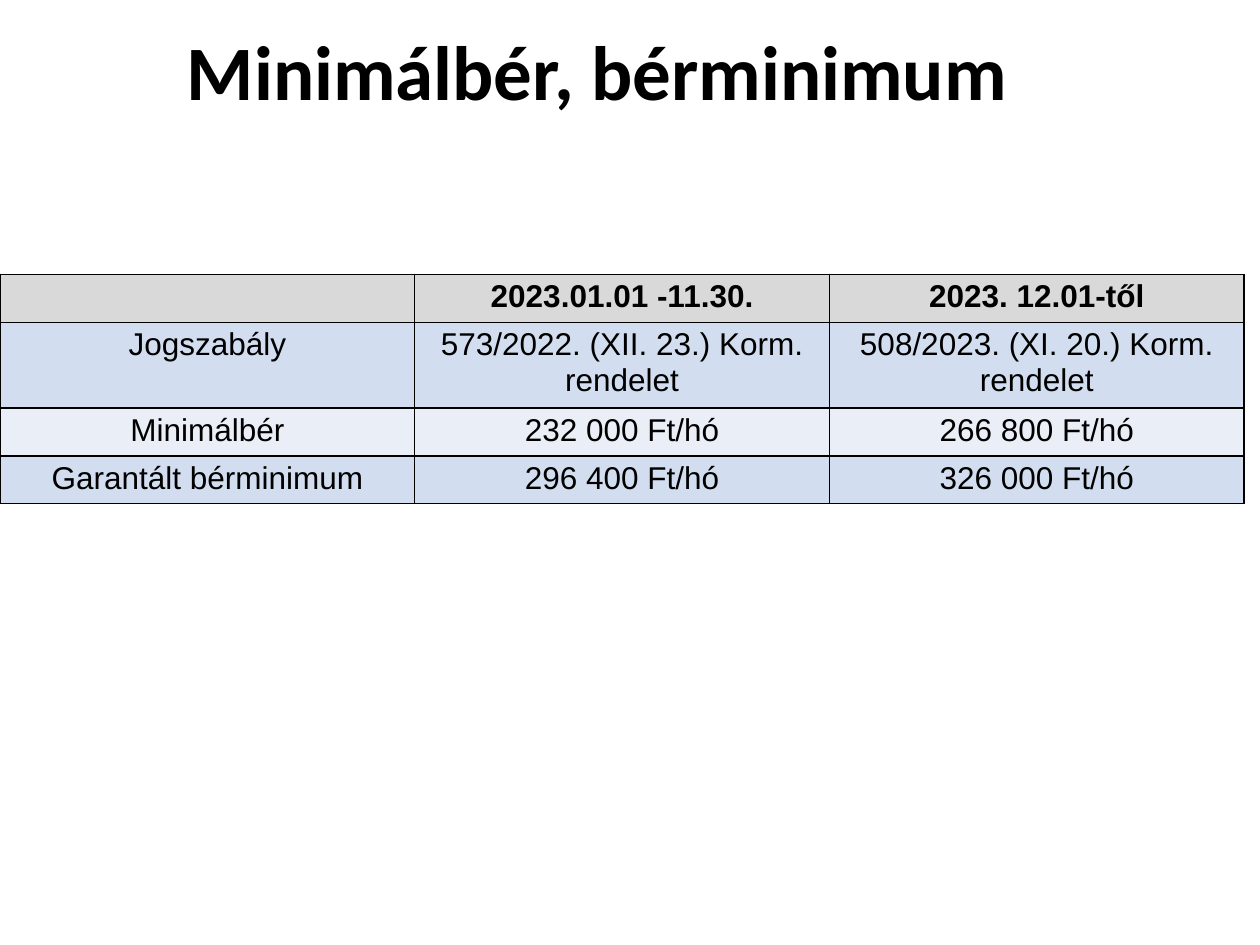
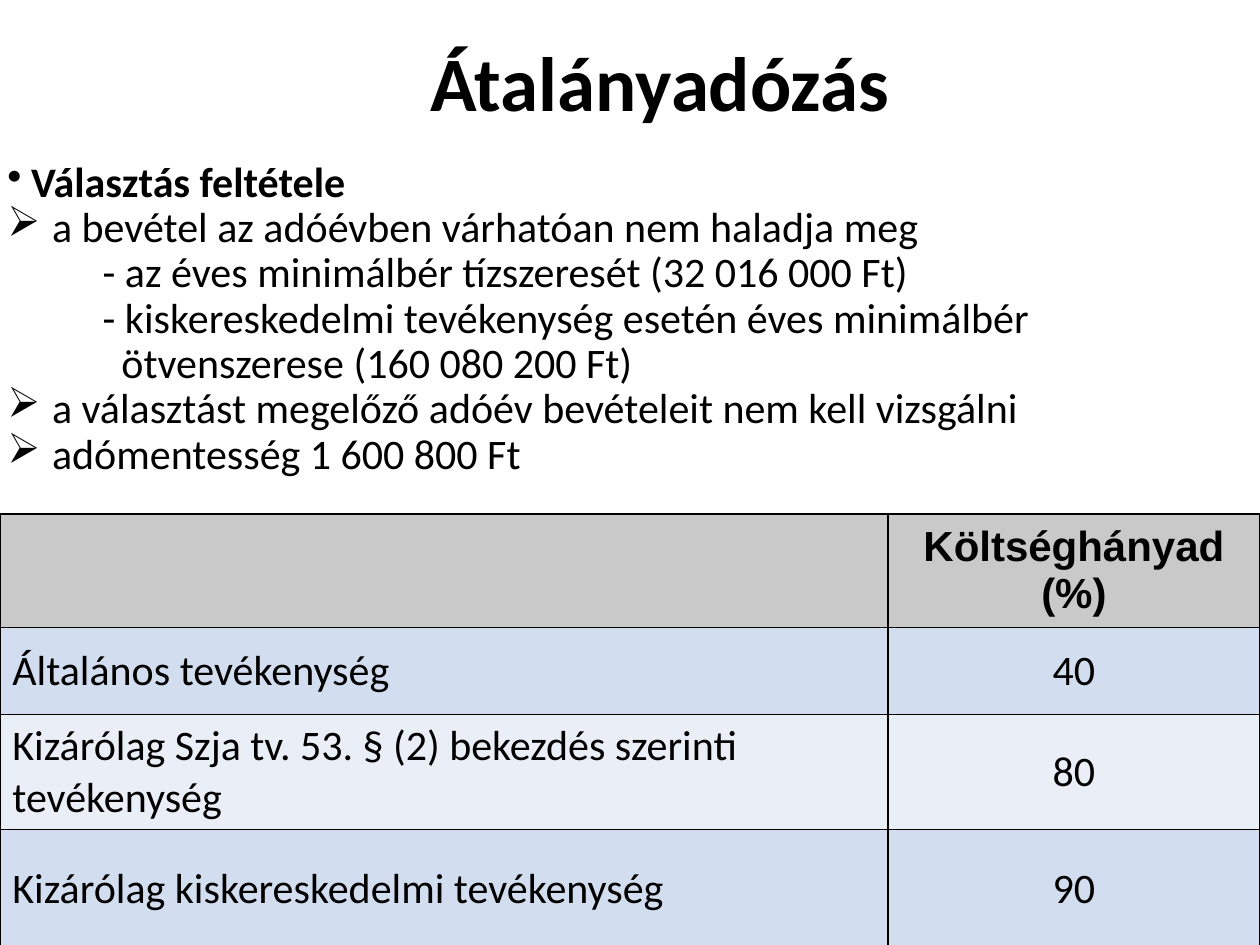
from dataclasses import dataclass

from lxml.etree import SubElement
from pptx import Presentation
from pptx.dml.color import RGBColor
from pptx.enum.text import MSO_ANCHOR as ANCHOR, PP_ALIGN as ALIGN
from pptx.oxml.ns import qn
from pptx.util import Cm, Pt


@dataclass(frozen=True)
class Theme:
    text: str = "000000"
    border: str = "000000"
    bands: tuple = ("D2DEEF", "EAEFF7")
    body_font: str = "Calibri"
    table_font: str = "Arial"
    title_size: int = 44
    body_size: int = 24
    small_size: int = 18
    border_width: int = 1
    line_spacing: float = 0.9


THEME = Theme()


# Text
def write(tf, text, *, new=False, size=THEME.body_size, font=THEME.body_font,
          bold=False, align=ALIGN.LEFT, spacing=None, bullet=None,
          left=0, hanging=0):
    """Write one paragraph; left and hanging are indents in cm."""
    p = tf.add_paragraph() if new else tf.paragraphs[0]
    p.alignment = align
    p.line_spacing = spacing
    p.font.size = Pt(size)
    pPr = p._p.get_or_add_pPr()
    pPr.set("marL", str(Cm(left)))
    pPr.set("indent", str(-Cm(hanging)))
    if bullet:
        bu = pPr.makeelement(qn("a:buChar"), {"char": bullet})
        pPr.insert_element_before(bu, "a:tabLst", "a:defRPr", "a:extLst")
    r = p.add_run()
    r.text = text
    r.font.size, r.font.name, r.font.bold = Pt(size), font, bold
    r.font.color.rgb = RGBColor.from_string(THEME.text)


def add_box(s, left, top, width, height, anchor=ANCHOR.TOP):
    sp = s.shapes.add_textbox(Cm(left), Cm(top), Cm(width), Cm(height))
    tf = sp.text_frame
    tf.word_wrap = True
    tf.vertical_anchor = anchor
    return tf


def add_title(s, text, left, top, width, height, anchor=ANCHOR.TOP):
    tf = add_box(s, left, top, width, height, anchor)
    write(tf, text, size=THEME.title_size, bold=True, align=ALIGN.CENTER,
          spacing=THEME.line_spacing)


def add_conditions(s, items, left, top, width, height):
    levels = {
        "heading": dict(bullet="•", left=0.48, hanging=0.48, bold=True),
        "arrow": dict(bullet="➢", left=0.9, hanging=0.9),
        "dash": dict(left=2.3, hanging=0.38),
    }
    tf = add_box(s, left, top, width, height)
    tf.margin_left = Cm(0.15)
    for i, (level, text) in enumerate(items):
        write(tf, text, new=i > 0, spacing=THEME.line_spacing, **levels[level])


# Tables
def style_cell(cell, fill, margins, anchor):
    tcPr = cell._tc.get_or_add_tcPr()
    for side in ("lnL", "lnR", "lnT", "lnB"):
        ln = SubElement(tcPr, qn(f"a:{side}"), w=str(Pt(THEME.border_width)))
        solid = SubElement(ln, qn("a:solidFill"))
        SubElement(solid, qn("a:srgbClr"), val=THEME.border)
    cell.fill.solid()
    cell.fill.fore_color.rgb = RGBColor.from_string(fill)
    cell.margin_left = cell.margin_right = Cm(margins[0])
    cell.margin_top = cell.margin_bottom = Cm(margins[1])
    cell.vertical_anchor = anchor


def add_grid(s, rows, left, top, widths, heights, *, header_fill, size,
             body_font, label_align, margins=(0.25, 0.13),
             anchor=ANCHOR.MIDDLE):
    table = s.shapes.add_table(len(rows), len(widths), Cm(left), Cm(top),
                               Cm(sum(widths)), Cm(sum(heights))).table
    for column, width in zip(table.columns, widths):
        column.width = Cm(width)
    for i, (row, values) in enumerate(zip(table.rows, rows)):
        row.height = Cm(heights[i])
        header = i == 0
        fill = header_fill if header else THEME.bands[(i - 1) % 2]
        for j, (cell, text) in enumerate(zip(row.cells, values)):
            style_cell(cell, fill, margins, anchor)
            write(cell.text_frame, text, size=size, bold=header,
                  font=THEME.table_font if header else body_font,
                  align=label_align if j == 0 else ALIGN.CENTER)


# Slides
def add_wage_slide(s):
    add_title(s, "Minimálbér, bérminimum", 0, 0.56, 24.1, 1.65)
    rows = [
        ("", "2023.01.01 -11.30.", "2023. 12.01-től"),
        ("Jogszabály", "573/2022. (XII. 23.) Korm. rendelet",
         "508/2023. (XI. 20.) Korm. rendelet"),
        ("Minimálbér", "232 000 Ft/hó", "266 800 Ft/hó"),
        ("Garantált bérminimum", "296 400 Ft/hó", "326 000 Ft/hó"),
    ]
    add_grid(s, rows, 0, 5.53, [8.36] * 3, [0.97, 1.61, 0.91, 0.91],
             header_fill="D9D9D9", size=THEME.small_size,
             body_font=THEME.table_font, label_align=ALIGN.CENTER,
             margins=(0.18, 0.1), anchor=ANCHOR.TOP)


def add_flat_tax_slide(s):
    add_title(s, "Átalányadózás", 3.1, 0.74, 20.42, 2, ANCHOR.MIDDLE)
    conditions = [
        ("heading", "Választás feltétele"),
        ("arrow", "a bevétel az adóévben várhatóan nem haladja meg"),
        ("dash", "- az éves minimálbér tízszeresét (32 016 000 Ft)"),
        ("dash", "- kiskereskedelmi tevékenység esetén éves minimálbér "
                 "ötvenszerese (160 080 200 Ft)"),
        ("arrow", "a választást megelőző adóév bevételeit nem kell vizsgálni"),
        ("arrow", "adómentesség 1 600 800 Ft"),
    ]
    add_conditions(s, conditions, 0, 3.12, 24.5, 7)
    rows = [
        ("", "Költséghányad (%)"),
        ("Általános tevékenység", "40"),
        ("Kizárólag Szja tv. 53. § (2) bekezdés szerinti tevékenység", "80"),
        ("Kizárólag kiskereskedelmi tevékenység", "90"),
    ]
    add_grid(s, rows, 0, 10.36, [17.9, 7.5], [2.14, 1.75, 2.32, 2.4],
             header_fill="C9C9C9", size=THEME.body_size,
             body_font=THEME.body_font, label_align=ALIGN.LEFT)


def main():
    prs = Presentation()
    prs.slide_width, prs.slide_height = Cm(25.4), Cm(19.05)
    blank = prs.slide_layouts[6]
    for build in (add_wage_slide, add_flat_tax_slide):
        build(prs.slides.add_slide(blank))
    prs.save("out.pptx")


if __name__ == "__main__":
    main()
